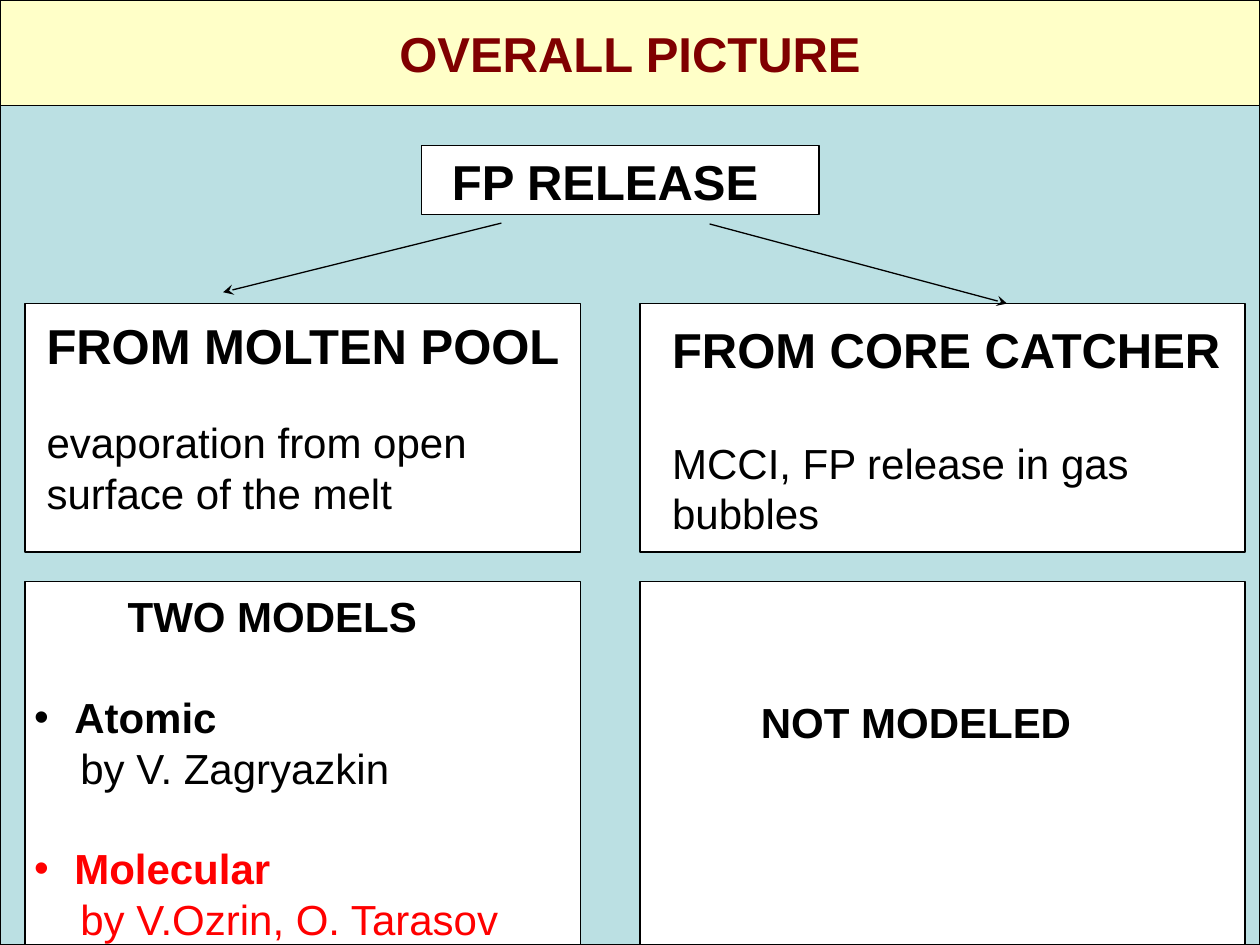
from pptx import Presentation
from pptx.dml.color import RGBColor
from pptx.enum import shapes, text
from pptx.oxml import ns
from pptx.util import Pt
from lxml import etree

BLACK = RGBColor(0x00, 0x00, 0x00)
WHITE = RGBColor(0xFF, 0xFF, 0xFF)
RED = RGBColor(0xFF, 0x00, 0x00)
MAROON = RGBColor(0x80, 0x00, 0x00)
CREAM = RGBColor(0xFF, 0xFF, 0xC8)
PALE_TEAL = RGBColor(0xBB, 0xE0, 0xE3)
CENTER = text.PP_ALIGN.CENTER


class SlideBuilder:
    """Holds the style and the current slide, and adds each kind of element."""

    font = "Arial"
    line_width = 0.75
    leading = 1.2

    def __init__(self, slide):
        self.slide = slide

    def outline(self, shape, fill):
        shape.fill.solid()
        shape.fill.fore_color.rgb = fill
        shape.line.color.rgb = BLACK
        shape.line.width = Pt(self.line_width)

    def panel(self, left, top, width, height, fill=WHITE):
        shape = self.slide.shapes.add_shape(
            shapes.MSO_SHAPE.RECTANGLE, Pt(left), Pt(top), Pt(width), Pt(height))
        shape.shadow.inherit = False
        self.outline(shape, fill)

    def format(self, paragraph, size, bold=False, color=BLACK, before=0, align=None):
        paragraph.line_spacing = Pt(size * self.leading)
        paragraph.space_before = Pt(before * self.leading)
        paragraph.alignment = align
        for run in paragraph.runs:
            run.font.name = self.font
            run.font.size = Pt(size)
            run.font.bold = bold
            run.font.color.rgb = color

    def place(self, shape, left, top, width, height):
        shape.left, shape.top = Pt(left), Pt(top)
        shape.width, shape.height = Pt(width), Pt(height)
        shape.text_frame.auto_size = text.MSO_AUTO_SIZE.NONE
        shape.element.getparent().append(shape.element)

    def title(self, words, left, top, width, height):
        shape = self.slide.shapes.title
        self.place(shape, left, top, width, height)
        self.outline(shape, CREAM)
        shape.text_frame.vertical_anchor = text.MSO_ANCHOR.MIDDLE
        shape.text_frame.text = words
        self.format(shape.text_frame.paragraphs[0], 28, True, MAROON, align=CENTER)

    def text_box(self, left, top, width, height, lines):
        shape = self.slide.shapes.add_textbox(Pt(left), Pt(top), Pt(width), Pt(height))
        frame = shape.text_frame
        frame.word_wrap = True
        frame.text = "\n".join(words for words, style in lines)
        for paragraph, (words, style) in zip(frame.paragraphs, lines):
            self.format(paragraph, **style)

    def body(self, left, top, width, height, lines):
        shape = self.slide.placeholders[1]
        self.place(shape, left, top, width, height)
        frame = shape.text_frame
        frame.text = "\n".join(words for words, *rest in lines)
        for paragraph, (words, margin, bullet, style) in zip(frame.paragraphs, lines):
            self.format(paragraph, 24, **style)
            properties = paragraph._p.get_or_add_pPr()
            properties.set("marL", str(Pt(margin)))
            properties.set("indent", str(-Pt(margin) if bullet else 0))
            if not bullet:
                etree.SubElement(properties, ns.qn("a:buNone"))

    def arrow(self, start_x, start_y, end_x, end_y):
        connector = self.slide.shapes.add_connector(
            shapes.MSO_CONNECTOR.STRAIGHT, Pt(start_x), Pt(start_y), Pt(end_x), Pt(end_y))
        connector.line.color.rgb = BLACK
        connector.line.width = Pt(self.line_width)
        line = connector.line._get_or_add_ln()
        etree.SubElement(line, ns.qn("a:tailEnd"), type="stealth")
        etree.SubElement(connector.element.spPr, ns.qn("a:effectLst"))


def main():
    presentation = Presentation()
    presentation.slide_width, presentation.slide_height = Pt(720), Pt(540)
    builder = SlideBuilder(presentation.slides.add_slide(presentation.slide_layouts[1]))
    heading = {"size": 28, "bold": True}
    plain = {"size": 24}

    builder.panel(0, 60.5, 720, 479.5, PALE_TEAL)
    for left, width in ((365.75, 345.75), (14.25, 317.5)):
        for top, height in ((332.5, 207.5), (173.5, 142)):
            builder.panel(left, top, width, height)
    builder.panel(241, 83, 227, 39.5)

    builder.title("OVERALL PICTURE", 0, 0, 720, 60.5)
    builder.text_box(241, 83, 209.5, 41, [("FP RELEASE", {**heading, "align": CENTER})])
    builder.arrow(286.5, 127.5, 127.5, 167)
    builder.arrow(405.5, 128, 575.5, 173.5)
    builder.text_box(19.5, 177, 312, 122.5, [
        ("FROM MOLTEN POOL", heading),
        ("evaporation from open", {**plain, "before": 20}),
        ("surface of the melt", plain),
    ])
    builder.text_box(377, 179, 343, 132, [
        ("FROM CORE CATCHER", heading),
        ("MCCI, FP release in gas bubbles", {**plain, "before": 28}),
    ])
    builder.body(12.25, 334, 313, 209, [
        ("TWO MODELS", 53.5, False, {"bold": True}),
        ("Atomic", 23, True, {"bold": True, "before": 24}),
        ("by V. Zagryazkin", 26.5, False, {}),
        ("Molecular", 23, True, {"bold": True, "color": RED, "before": 24}),
        ("by V.Ozrin, O. Tarasov", 26.5, False, {"color": RED}),
    ])
    builder.text_box(427.75, 394.5, 191.5, 36, [("NOT MODELED", {**plain, "bold": True})])
    presentation.save("out.pptx")


if __name__ == "__main__":
    main()
